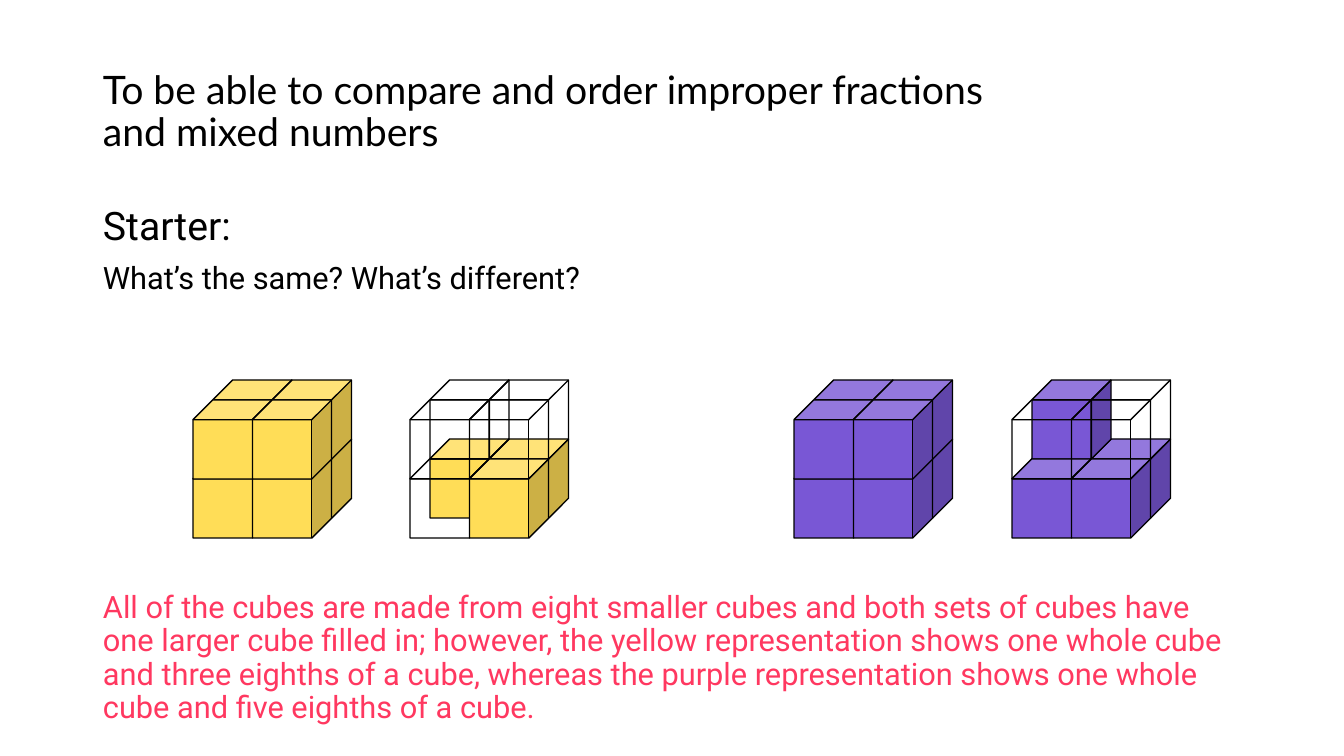
from itertools import product

from pptx import Presentation
from pptx.dml.color import RGBColor
from pptx.enum.shapes import MSO_SHAPE
from pptx.enum.text import MSO_ANCHOR
from pptx.util import Pt

# Content
COLORS = {"black": "000000", "pink": "FF3860", "yellow": "FFDD57", "purple": "7957D5"}
TITLE = "To be able to compare and order improper fractions and mixed numbers"
STARTER = [("Starter:", 28), ("What’s the same? What’s different?", 22)]
ANSWER = (
    "All of the cubes are made from eight smaller cubes and both sets of cubes have "
    "one larger cube filled in; however, the yellow representation shows one whole cube "
    "and three eighths of a cube, whereas the purple representation shows one whole "
    "cube and five eighths of a cube."
)
# Left edge, colour, small cubes filled (1) or open (0), from back to front:
# back lower, back upper, front lower, front upper; left then right in each
BIG_CUBES = [
    (1012, "purple", "11101100"),
    (794, "purple", "11111111"),
    (410, "yellow", "11000100"),
    (193, "yellow", "11111111"),
]

# Layout in px
PX = 9071.43
MARGIN, TEXT_W = 103, 1139
CUBE, DEPTH, CUBE_TOP = 79, 20, 380
STEP = CUBE - DEPTH


def px(*lengths):
    return [round(n * PX) for n in lengths]


def color(name):
    return RGBColor.from_string(COLORS[name])


def add_text(s, lines, box, font="Roboto", fill="black", anchor=MSO_ANCHOR.TOP):
    tf = s.shapes.add_textbox(*px(*box)).text_frame
    tf.word_wrap = True
    tf.vertical_anchor = anchor
    tf.margin_left = tf.margin_right = tf.margin_top = tf.margin_bottom = 0
    for i, (text, size) in enumerate(lines):
        p = tf.paragraphs[0] if i == 0 else tf.add_paragraph()
        p.line_spacing = 0.9
        p.space_before = Pt(10 if i else 0)
        r = p.add_run()
        r.text = text
        r.font.name, r.font.size = font, Pt(size)
        r.font.color.rgb = color(fill)


def add_big_cube(s, left, fill, filled):
    for (front, upper, right), bit in zip(product((0, 1), repeat=3), filled):
        x = left + (1 - front) * DEPTH + right * (STEP + 0.5)
        y = CUBE_TOP + front * DEPTH + (1 - upper) * STEP
        sp = s.shapes.add_shape(MSO_SHAPE.CUBE, *px(x, y, CUBE, CUBE))
        sp.shadow.inherit = False
        sp.line.color.rgb = color("black")
        sp.line.width = Pt(1)
        if bit == "1":
            sp.fill.solid()
            sp.fill.fore_color.rgb = color(fill)
        else:
            sp.fill.background()


def main():
    prs = Presentation()
    prs.slide_width, prs.slide_height = px(1344, 756)
    s = prs.slides.add_slide(prs.slide_layouts[6])

    # Text
    add_text(s, [(TITLE, 28)], (MARGIN, 40, 948, 146), font="Lato", anchor=MSO_ANCHOR.MIDDLE)
    add_text(s, STARTER, (MARGIN, 207, TEXT_W, 90))
    add_text(s, [(ANSWER, 22)], (MARGIN, 592, TEXT_W, 134), fill="pink")

    # Cubes
    for left, fill, filled in BIG_CUBES:
        add_big_cube(s, left, fill, filled)

    prs.save("out.pptx")


if __name__ == "__main__":
    main()
